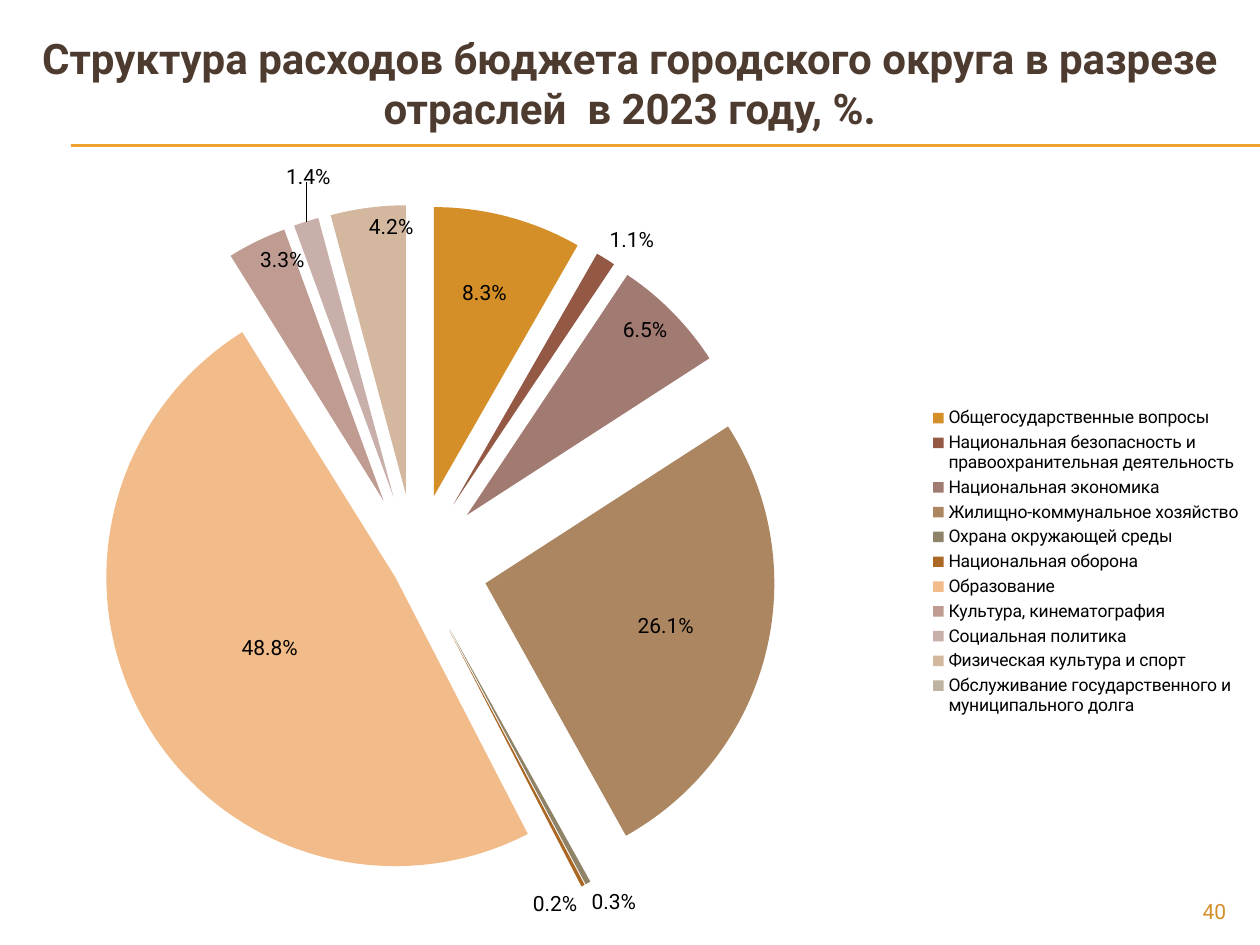
from lxml import etree
from pptx import Presentation
from pptx.chart.data import CategoryChartData
from pptx.dml.color import RGBColor
from pptx.enum.chart import XL_CHART_TYPE as ChartType, XL_LEGEND_POSITION as LegendPosition
from pptx.enum.shapes import MSO_CONNECTOR as Connector
from pptx.enum.text import MSO_ANCHOR as Anchor, PP_ALIGN as Align
from pptx.oxml import parse_xml
from pptx.oxml.ns import qn
from pptx.util import Inches, Pt

FONT = "Roboto"
CHART_NS = 'xmlns:c="http://schemas.openxmlformats.org/drawingml/2006/chart"'
LABEL_FORMAT = '0.0"%"'

# category, percent, colour, label position, label shift
SECTORS = [
    ("Общегосударственные вопросы", 8.3, "D48F28", "ctr", (0.01, -0.08)),
    ("Национальная безопасность и правоохранительная деятельность", 1.1, "935945", "outEnd", None),
    ("Национальная экономика", 6.5, "A17A72", "inEnd", None),
    ("Жилищно-коммунальное хозяйство", 26.1, "AC8660", "ctr", (0.03, 0.01)),
    ("Охрана окружающей среды", 0.3, "8F8467", "outEnd", None),
    ("Национальная оборона", 0.2, "AB6724", "outEnd", (-0.04, 0)),
    ("Образование", 48.8, "F2BC8A", "ctr", None),
    ("Культура, кинематография", 3.3, "BF9B91", "inEnd", None),
    ("Социальная политика", 1.4, "C9AFA9", "outEnd", (0.02, -0.04)),
    ("Физическая культура и спорт", 4.2, "D4B79F", "inEnd", None),
    ("Обслуживание государственного и муниципального долга", 0, "BDB5A2", "outEnd", None),
]
EXPLOSION = 25
EXPLOSION_OF = {"Образование": 8}


def color(value):
    return RGBColor.from_string(value)


def style_font(font, tint, **values):
    font.name = FONT
    font.color.rgb = color(tint)
    for name, value in values.items():
        setattr(font, name, value)


def add_text(page, box, text, align, anchor, tint, **values):
    frame = page.shapes.add_textbox(*map(Inches, box)).text_frame
    settings = {"word_wrap": True, "vertical_anchor": anchor,
                "margin_top": 0, "margin_bottom": 0}
    for name, value in settings.items():
        setattr(frame, name, value)
    para = frame.paragraphs[0]
    para.alignment = align
    span = para.add_run()
    span.text = text
    style_font(span.font, tint, **values)


def add_rule(page, left, right, top):
    line = page.shapes.add_connector(
        Connector.STRAIGHT, Inches(left), Inches(top), Inches(right), Inches(top))
    line.line.color.rgb = color("F0A22E")
    line.line.width = Pt(0.75)
    etree.SubElement(line._element.spPr, qn("a:effectLst"))


def layout_xml(**values):
    parts = "".join(f'<c:{name} val="{value}"/>' for name, value in values.items())
    return f"<c:layout {CHART_NS}><c:manualLayout>{parts}</c:manualLayout></c:layout>"


def set_layout(parent, index, **values):
    for old in parent.findall(qn("c:layout")):
        parent.remove(old)
    parent.insert(index, parse_xml(layout_xml(**values)))


def label_xml(index, position, shift):
    layout = layout_xml(x=shift[0], y=shift[1]) if shift else ""
    shown = {"LegendKey": 0, "Val": 1, "CatName": 0, "SerName": 0,
             "Percent": 0, "BubbleSize": 0}
    flags = "".join(f'<c:show{name} val="{value}"/>' for name, value in shown.items())
    return (f'<c:dLbl {CHART_NS}><c:idx val="{index}"/>{layout}'
            f"<c:numFmt formatCode='{LABEL_FORMAT}' sourceLinked='0'/>"
            f'<c:dLblPos val="{position}"/>{flags}</c:dLbl>')


def explode_before(successor, amount):
    explosion = etree.Element(qn("c:explosion"))
    explosion.set("val", str(amount))
    successor.addprevious(explosion)


def style_sectors(series):
    labels = series.data_labels
    settings = {"show_percentage": False, "show_value": True,
                "number_format": LABEL_FORMAT, "number_format_is_linked": False}
    for name, value in settings.items():
        setattr(labels, name, value)
    style_font(labels.font, "000000", size=Pt(12))
    for index, (category, _, tint, position, shift) in enumerate(SECTORS):
        point = series.points[index]
        point.format.fill.solid()
        point.format.fill.fore_color.rgb = color(tint)
        point.format.line.fill.background()
        point_xml = series._element.findall(qn("c:dPt"))[index]
        explode_before(point_xml.find(qn("c:spPr")), EXPLOSION_OF.get(category, EXPLOSION))
        labels._element.insert(index, parse_xml(label_xml(index, position, shift)))
    explode_before(series._element.find(qn("c:dPt")), EXPLOSION)
    for old in labels._element.findall(qn("c:showLeaderLines")):
        labels._element.remove(old)
    etree.SubElement(labels._element, qn("c:showLeaderLines")).set("val", "1")


def add_pie(page, box):
    data = CategoryChartData(number_format="0.0")
    data.categories = [sector[0] for sector in SECTORS]
    data.add_series("Series 1", [sector[1] for sector in SECTORS])
    chart = page.shapes.add_chart(ChartType.PIE, *map(Inches, box), data).chart
    chart.has_title = False
    style_font(chart.font, "000000", size=Pt(18))
    chart.plots[0].vary_by_categories = True
    style_sectors(chart.plots[0].series[0])
    chart.has_legend = True
    legend = chart.legend
    legend.position = LegendPosition.RIGHT
    legend.include_in_layout = False
    style_font(legend.font, "000000", size=Pt(10))
    modes = {"xMode": "edge", "yMode": "edge"}
    set_layout(legend._element, 1, **modes, x=0.75, y=0.3, w=0.24, h=0.4)
    plot_area = chart._chartSpace.chart.plotArea
    set_layout(plot_area, 0, layoutTarget="inner", **modes, x=0.06, y=0.05, w=0.62, h=0.91)


def main():
    deck = Presentation()
    deck.slide_width, deck.slide_height = Inches(10), Inches(7.5)
    page = deck.slides.add_slide(deck.slide_layouts[6])
    for top in (1.15, 1.16):
        add_rule(page, 0.56, 10, top)
    add_pie(page, (-0.64, 1.31, 10.64, 6.3))
    add_text(page, (0, 0.2, 10, 0.91),
             "Структура расходов бюджета городского округа в разрезе отраслей  в 2023 году, %.",
             Align.CENTER, Anchor.MIDDLE, "4E3B30", size=Pt(24), bold=True)
    add_text(page, (9, 7.1, 0.83, 0.27), "40", Align.RIGHT, Anchor.MIDDLE,
             "D48F29", size=Pt(12))
    deck.save("out.pptx")


if __name__ == "__main__":
    main()
